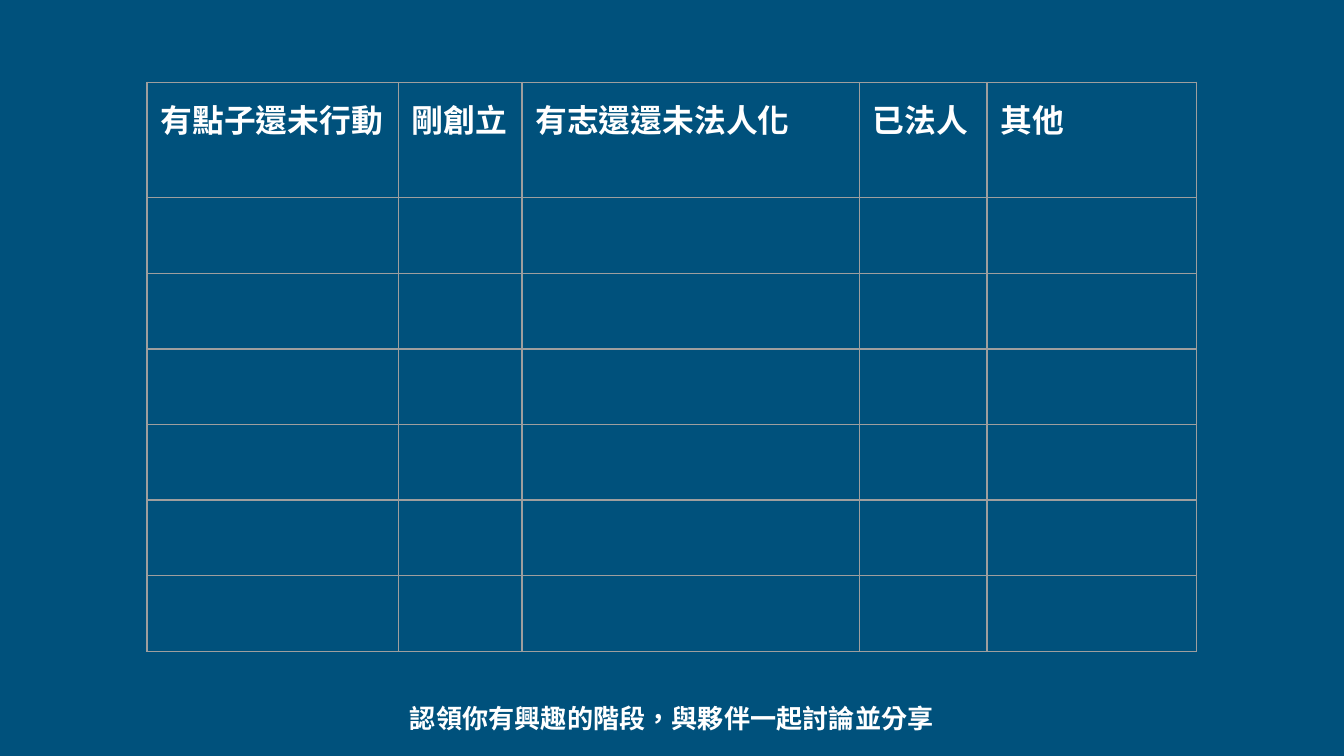
from dataclasses import dataclass
from lxml.etree import SubElement
from pptx import Presentation
from pptx.dml.color import RGBColor
from pptx.enum.lang import MSO_LANGUAGE_ID
from pptx.enum.text import PP_ALIGN
from pptx.oxml.ns import qn
from pptx.slide import Slide
from pptx.util import Inches, Pt

NAVY = RGBColor(0x00, 0x51, 0x7C)
WHITE = RGBColor(0xFF, 0xFF, 0xFF)
GRAY = RGBColor(0x9E, 0x9E, 0x9E)
WIDTH = Inches(10)
HEIGHT = WIDTH * 9 // 16
PAD = Inches(0.1)
STAGES = {
    "有點子還未行動": 18.7,
    "剛創立": 9.2,
    "有志還還未法人化": 25.1,
    "已法人": 9.5,
    "其他": 15.6,
}
ROWS = [15.3] + [10] * 6


def across(share):
    return int(WIDTH * share / 100)


def down(share):
    return int(HEIGHT * share / 100)


def write(frame, text, size=14, color=WHITE, bold=True, align=PP_ALIGN.LEFT):
    para = frame.paragraphs[0]
    para.alignment = align
    run = para.add_run()
    run.text = text
    run.font.name = "Arial"
    run.font.size = Pt(size)
    run.font.bold = bold
    run.font.color.rgb = color
    run.font.language_id = MSO_LANGUAGE_ID.TRADITIONAL_CHINESE


def inset(item):
    item.margin_left = item.margin_right = PAD
    item.margin_top = item.margin_bottom = PAD


@dataclass
class Board:
    """Draws styled elements on a slide, placed by percent of its size."""

    slide: Slide
    line: RGBColor = GRAY
    weight: float = 0.75

    def paint(self, color):
        fill = self.slide.background.fill
        fill.solid()
        fill.fore_color.rgb = color

    def border(self, cell):
        props = cell._tc.get_or_add_tcPr()
        for side in ("L", "R", "T", "B"):
            edge = SubElement(props, qn(f"a:ln{side}"), w=str(Pt(self.weight)))
            fill = SubElement(edge, qn("a:solidFill"))
            SubElement(fill, qn("a:srgbClr"), val=str(self.line))

    def table(self, left, top, heads, rows, size):
        grid = self.slide.shapes.add_table(
            len(rows), len(heads), across(left), down(top),
            across(sum(heads.values())), down(sum(rows))).table
        grid.first_row = grid.horz_banding = False
        for col, share in zip(grid.columns, heads.values()):
            col.width = across(share)
        for row, share in zip(grid.rows, rows):
            row.height = down(share)
        for cell in grid.iter_cells():
            inset(cell)
            self.border(cell)
            cell.fill.background()
        for cell, text in zip(grid.rows[0].cells, heads):
            write(cell.text_frame, text, size=size)

    def label(self, left, top, width, height, text, **style):
        frame = self.slide.shapes.add_textbox(
            across(left), down(top), across(width), down(height)).text_frame
        frame.word_wrap = True
        inset(frame)
        write(frame, text, **style)


def main():
    deck = Presentation()
    deck.slide_width, deck.slide_height = WIDTH, HEIGHT
    board = Board(deck.slides.add_slide(deck.slide_layouts[6]))
    board.paint(NAVY)
    board.table(10.94, 10.87, STAGES, ROWS, size=17)
    board.label(17.4, 91.1, 65.2, 7.8,
                "認領你有興趣的階段，與夥伴一起討論並分享", align=PP_ALIGN.CENTER)
    deck.save("out.pptx")


if __name__ == "__main__":
    main()
